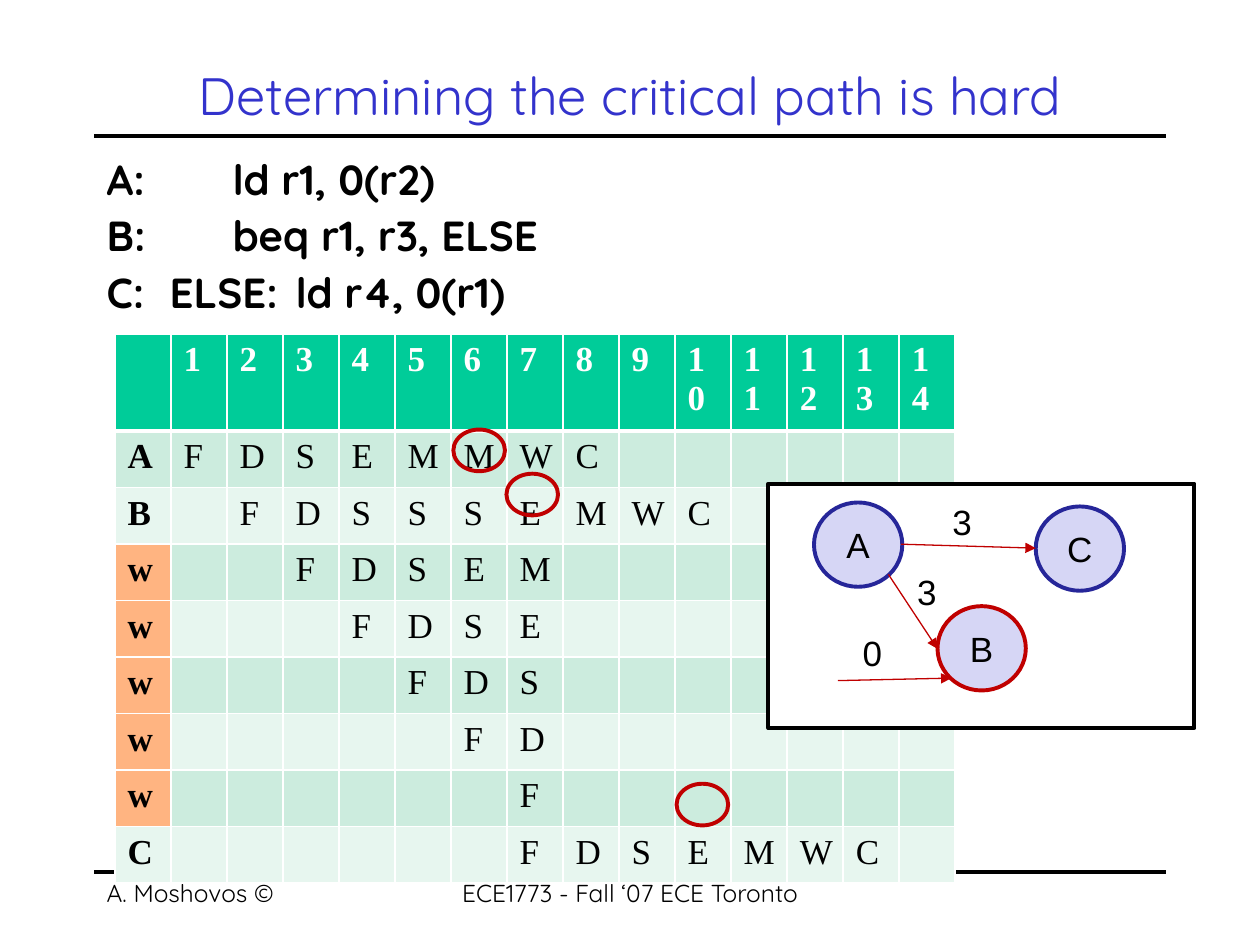
from lxml.etree import SubElement
from pptx import Presentation
from pptx.dml.color import RGBColor
from pptx.enum.shapes import MSO_CONNECTOR, MSO_SHAPE
from pptx.enum.text import MSO_ANCHOR, PP_ALIGN
from pptx.oxml.ns import qn
from pptx.util import Cm, Pt

color = RGBColor.from_string


def write(frame, text, size, font, hue="000000", bold=False, align=PP_ALIGN.LEFT):
    paragraph = frame.paragraphs[0]
    for number, line in enumerate(text.split("\n")):
        if number:
            paragraph = frame.add_paragraph()
        paragraph.alignment = align
        run = paragraph.add_run()
        run.text = line
        run.font.size = Pt(size)
        run.font.name = font
        run.font.bold = bold
        run.font.color.rgb = color(hue)


def add_line(start_x, start_y, end_x, end_y, hue, width, arrow=False):
    connector = slide.shapes.add_connector(
        MSO_CONNECTOR.STRAIGHT, Cm(start_x), Cm(start_y), Cm(end_x), Cm(end_y))
    connector.line.color.rgb = color(hue)
    connector.line.width = Pt(width)
    properties = connector.line._get_or_add_ln()
    if arrow:
        SubElement(properties, qn("a:tailEnd"), type="triangle")
    SubElement(connector._element.spPr, qn("a:effectLst"))


presentation = Presentation()
presentation.slide_width = Cm(25.4)
presentation.slide_height = Cm(19.05)
slide = presentation.slides.add_slide(presentation.slide_layouts[6])

# Rules under the title and above the footer
for y in (2.75, 17.57):
    add_line(1.9, y, 23.5, y, "000000", 2.25)

# Title, code listing and footer
code = "A:\t\tld r1, 0(r2)\nB:\t\tbeq r1, r3, ELSE\nC:\tELSE:\tld r4, 0(r1)"
texts = [
    ("Determining the critical path is hard", 1.9, 1.06, 21.6, 1.69, 30, "3333CC", False,
     PP_ALIGN.CENTER, MSO_ANCHOR.MIDDLE),
    (code, 1.9, 2.96, 21.6, 14.4, 24, "000000", True, PP_ALIGN.LEFT, MSO_ANCHOR.TOP),
    ("A. Moshovos ©", 1.9, 17.57, 5.29, 1.06, 14, "000000", False,
     PP_ALIGN.LEFT, MSO_ANCHOR.TOP),
    ("ECE1773 - Fall ‘07 ECE Toronto", 8.26, 17.57, 8.89, 1.06, 14, "000000", False,
     PP_ALIGN.CENTER, MSO_ANCHOR.TOP),
]
for text, left, top, width, height, size, hue, bold, align, anchor in texts:
    frame = slide.shapes.add_textbox(Cm(left), Cm(top), Cm(width), Cm(height)).text_frame
    frame.word_wrap = True
    frame.vertical_anchor = anchor
    write(frame, text, size, "Quicksand", hue, bold, align)
    for paragraph in frame.paragraphs[1:]:
        paragraph.space_before = Pt(3.5)

# Pipeline table: instruction, first cycle, stages
CYCLES = 14
pipeline = [
    ("A", 1, "FDSEMMWC"),
    ("B", 2, "FDSSSEMWC"),
    ("w", 3, "FDSEM"),
    ("w", 4, "FDSE"),
    ("w", 5, "FDS"),
    ("w", 6, "FD"),
    ("w", 7, "F"),
    ("C", 7, "FDSEMWC"),
]
rows = [[""] + [str(cycle) for cycle in range(1, CYCLES + 1)]]
for name, first, stages in pipeline:
    before = [""] * (first - 1)
    after = [""] * (CYCLES - len(before) - len(stages))
    rows.append([name] + before + list(stages) + after)

table = slide.shapes.add_table(
    len(rows), CYCLES + 1, Cm(2.32), Cm(6.74), Cm(16.93), Cm(10.92)).table
for column in table.columns:
    column.width = Cm(1.13)
for r, values in enumerate(rows):
    table.rows[r].height = Cm(1.14 if r else 1.8)
    for c, value in enumerate(values):
        cell = table.cell(r, c)
        cell_properties = cell._tc.get_or_add_tcPr()
        for side in ("lnL", "lnR", "lnT", "lnB"):
            thick = (r, side) in ((0, "lnB"), (1, "lnT"))
            border = SubElement(cell_properties, qn("a:" + side),
                                w=str(Pt(3 if thick else 1)))
            fill = SubElement(border, qn("a:solidFill"))
            SubElement(fill, qn("a:srgbClr"), val="FFFFFF")
        if r == 0:
            background = "00CC99"
        elif value == "w":
            background = "FFB481"
        else:
            background = "CCECDE" if r % 2 else "E7F6EF"
        cell.fill.solid()
        cell.fill.fore_color.rgb = color(background)
        if value:
            write(cell.text_frame, value, 20, "Times New Roman",
                  "000000" if r else "FFFFFF", r == 0 or c == 0)

# Dependence graph panel and nodes, then rings around the critical stages
RING = (1.04, 0.84)
NODE = (1.78, 1.7)
outlines = [
    (MSO_SHAPE.RECTANGLE, 15.49, 9.75, (8.59, 4.93), "FFFFFF", "000000", ""),
    (MSO_SHAPE.OVAL, 16.41, 10.13, NODE, "D6D6F5", "262699", "A"),
    (MSO_SHAPE.OVAL, 20.88, 10.21, NODE, "D6D6F5", "262699", "C"),
    (MSO_SHAPE.OVAL, 18.9, 12.22, NODE, "D6D6F5", "C00000", "B"),
    (MSO_SHAPE.OVAL, 9.14, 8.66, RING, None, "C00000", ""),
    (MSO_SHAPE.OVAL, 10.21, 9.55, RING, None, "C00000", ""),
    (MSO_SHAPE.OVAL, 13.64, 15.8, RING, None, "C00000", ""),
]
for kind, left, top, (width, height), background, hue, label in outlines:
    shape = slide.shapes.add_shape(kind, Cm(left), Cm(top), Cm(width), Cm(height))
    shape.shadow.inherit = False
    if background:
        shape.fill.solid()
        shape.fill.fore_color.rgb = color(background)
    else:
        shape.fill.background()
    shape.line.color.rgb = color(hue)
    shape.line.width = Pt(2.25)
    if label:
        shape.text_frame.vertical_anchor = MSO_ANCHOR.MIDDLE
        write(shape.text_frame, label, 20, "Arial", align=PP_ALIGN.CENTER)

# Graph edges with their latencies
edges = [
    (17.91, 11.58, 18.9, 13.08, "3", 18.24, 11.38),
    (18.16, 10.97, 20.88, 11.05, "3", 18.95, 9.96),
    (16.89, 13.72, 19.18, 13.67, "0", 17.14, 12.6),
]
for start_x, start_y, end_x, end_y, latency, left, top in edges:
    add_line(start_x, start_y, end_x, end_y, "C00000", 0.75, arrow=True)
    frame = slide.shapes.add_textbox(Cm(left), Cm(top), Cm(0.91), Cm(1.12)).text_frame
    frame.word_wrap = False
    write(frame, latency, 20, "Arial")

presentation.save("out.pptx")
